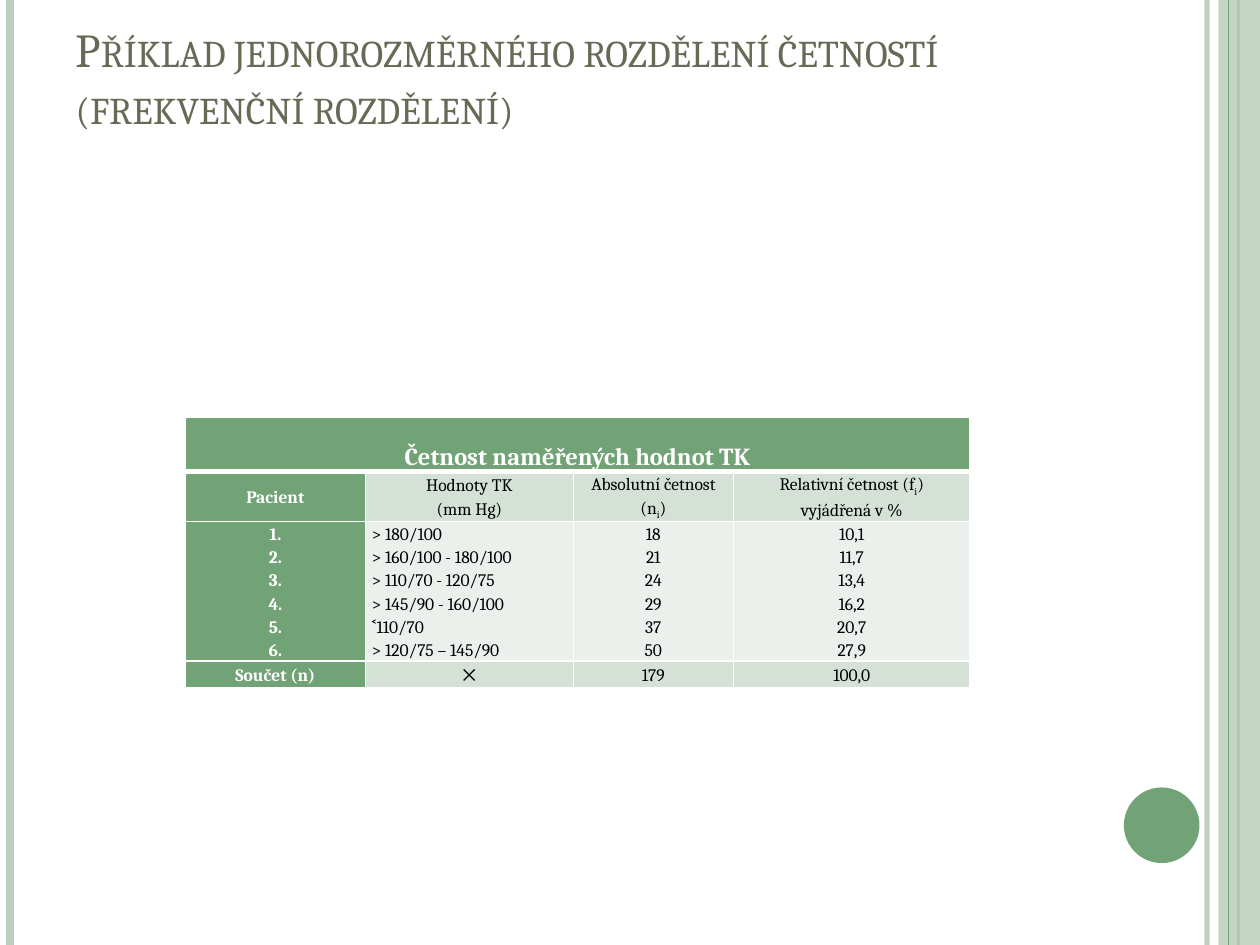
from lxml.etree import SubElement
from pptx import Presentation
from pptx.dml.color import RGBColor
from pptx.enum.shapes import MSO_CONNECTOR, MSO_SHAPE
from pptx.enum.text import MSO_ANCHOR, PP_ALIGN
from pptx.oxml.ns import qn
from pptx.util import Inches, Pt

# Content
FONT = "Cambria"
GREEN, PALE_GREEN, WHITE, BLACK = "72A376", "BCCEBD", "FFFFFF", "000000"
HEADER_BAND, BODY_BAND = "D5E0D6", "EBF0EC"
TITLE = "Příklad jednorozměrného rozdělení četností (frekvenční rozdělení)"
TABLE_TITLE = "Četnost naměřených hodnot TK"
SUBSCRIPT = "i"

# A cell is a list of paragraphs; a tuple is (text, subscript, text)
HEADER = [
    ["Pacient"],
    ["Hodnoty TK", "(mm Hg)"],
    [("Absolutní četnost (n", SUBSCRIPT, ")")],
    [("Relativní četnost (f", SUBSCRIPT, ")"), "vyjádřená v %"],
]
PATIENTS = [
    ("1.", "> 180/100", "18", "10,1"),
    ("2.", "> 160/100 - 180/100", "21", "11,7"),
    ("3.", "> 110/70 - 120/75", "24", "13,4"),
    ("4.", "> 145/90 - 160/100", "29", "16,2"),
    ("5.", "˂110/70", "37", "20,7"),
    ("6.", "> 120/75 – 145/90", "50", "27,9"),
]
TOTALS = [["Součet (n)"], ["✕"], ["179"], ["100,0"]]
TABLE_ROWS = [
    (HEADER, HEADER_BAND),
    ([list(column) for column in zip(*PATIENTS)], BODY_BAND),
    (TOTALS, HEADER_BAND),
]
COLUMN_WIDTHS = [1.43, 1.65, 1.27, 1.88]
ROW_HEIGHTS = [0.43, 0.4, 1.1, 0.21]

# Vertical rules: x, colour, width in points, opacity in percent
RULES_BELOW_BAND = [(9.58, PALE_GREEN, 3, 93), (0.08, PALE_GREEN, 4.5, 100), (9.83, GREEN, 1.5, 100)]
RULES_ABOVE_BAND = [(9.75, GREEN, 0.75, 100)]


def color(value):
    return RGBColor.from_string(value)


def set_opacity(element, percent):
    for node in element.spPr.iter(qn("a:srgbClr")):
        SubElement(node, qn("a:alpha"), val=str(percent * 1000))


def add_rules(slide, rules):
    for x, line_color, width, opacity in rules:
        rule = slide.shapes.add_connector(
            MSO_CONNECTOR.STRAIGHT, Inches(x), 0, Inches(x), Inches(7.5))
        rule.line.color.rgb = color(line_color)
        rule.line.width = Pt(width)
        if opacity < 100:
            set_opacity(rule._element, opacity)
        SubElement(rule._element.spPr, qn("a:effectLst"))


def add_plain_shape(slide, kind, left, top, width, height, fill):
    shape = slide.shapes.add_shape(
        kind, Inches(left), Inches(top), Inches(width), Inches(height))
    shape.shadow.inherit = False
    shape.fill.solid()
    shape.fill.fore_color.rgb = color(fill)
    shape.line.fill.background()
    return shape


def format_run(run, size, font_color, bold=False):
    run.font.name = FONT
    run.font.size = Pt(size)
    run.font.bold = bold
    run.font.color.rgb = color(font_color)


def set_borders(cell, bottom_width=1):
    properties = cell._tc.get_or_add_tcPr()
    widths = [("L", 1), ("R", 1), ("T", 1), ("B", bottom_width)]
    for index, (side, width) in enumerate(widths):
        line = SubElement(properties, qn(f"a:ln{side}"), w=str(Pt(width)))
        fill = SubElement(line, qn("a:solidFill"))
        SubElement(fill, qn("a:srgbClr"), val=WHITE)
        properties.insert(index, line)


def fill_cell(cell, lines, fill, anchor, align=PP_ALIGN.CENTER, size=10, bottom_width=1):
    on_green = fill == GREEN
    cell.fill.solid()
    cell.fill.fore_color.rgb = color(fill)
    cell.margin_left = cell.margin_right = Inches(0.05)
    cell.margin_top = cell.margin_bottom = 0
    cell.vertical_anchor = anchor
    for index, line in enumerate(lines):
        frame = cell.text_frame
        paragraph = frame.add_paragraph() if index else frame.paragraphs[0]
        paragraph.alignment = align
        paragraph.line_spacing = 1.15
        for text in (line if isinstance(line, tuple) else (line,)):
            run = paragraph.add_run()
            run.text = text
            format_run(run, size, WHITE if on_green else BLACK, on_green)
            if text == SUBSCRIPT:
                run.font._element.set("baseline", "-25000")
    set_borders(cell, bottom_width)


def add_title(slide):
    title = slide.shapes.title
    title.left, title.top = Inches(0.5), Inches(0.3)
    title.width, title.height = Inches(8.17), Inches(1.25)
    frame = title.text_frame
    frame.word_wrap = True
    frame.vertical_anchor = MSO_ANCHOR.BOTTOM
    frame.margin_bottom = Inches(0.49)
    paragraph = frame.paragraphs[0]
    paragraph.alignment = PP_ALIGN.LEFT
    run = paragraph.add_run()
    run.text = TITLE
    format_run(run, 27, "676A55")
    run.font._element.set("cap", "small")


def add_frequency_table(slide):
    table = slide.shapes.add_table(
        len(ROW_HEIGHTS), len(COLUMN_WIDTHS), Inches(1.47), Inches(3.31),
        Inches(sum(COLUMN_WIDTHS)), Inches(sum(ROW_HEIGHTS))).table
    for column, width in zip(table.columns, COLUMN_WIDTHS):
        column.width = Inches(width)
    for row, height in zip(table.rows, ROW_HEIGHTS):
        row.height = Inches(height)

    # Heading across all columns
    table.cell(0, 0).merge(table.cell(0, len(COLUMN_WIDTHS) - 1))
    fill_cell(table.cell(0, 0), [TABLE_TITLE], GREEN, MSO_ANCHOR.BOTTOM, size=14, bottom_width=3)

    # Column names, patients and totals
    for row_index, (cells, band) in enumerate(TABLE_ROWS, start=1):
        is_body = band == BODY_BAND
        for column_index, lines in enumerate(cells):
            is_values = is_body and column_index == 1
            fill_cell(
                table.cell(row_index, column_index), lines,
                band if column_index else GREEN,
                MSO_ANCHOR.TOP if is_body else MSO_ANCHOR.MIDDLE,
                PP_ALIGN.LEFT if is_values else PP_ALIGN.CENTER)


def main():
    presentation = Presentation()
    presentation.slide_width, presentation.slide_height = Inches(10), Inches(7.5)
    slide = presentation.slides.add_slide(presentation.slide_layouts[5])

    # Side decoration
    add_rules(slide, RULES_BELOW_BAND)
    band = add_plain_shape(slide, MSO_SHAPE.RECTANGLE, 9.67, 0, 0.33, 7.5, PALE_GREEN)
    set_opacity(band._element, 87)
    add_rules(slide, RULES_ABOVE_BAND)
    add_plain_shape(slide, MSO_SHAPE.OVAL, 8.92, 6.25, 0.6, 0.6, GREEN)

    add_title(slide)
    add_frequency_table(slide)
    presentation.save("out.pptx")


if __name__ == "__main__":
    main()
